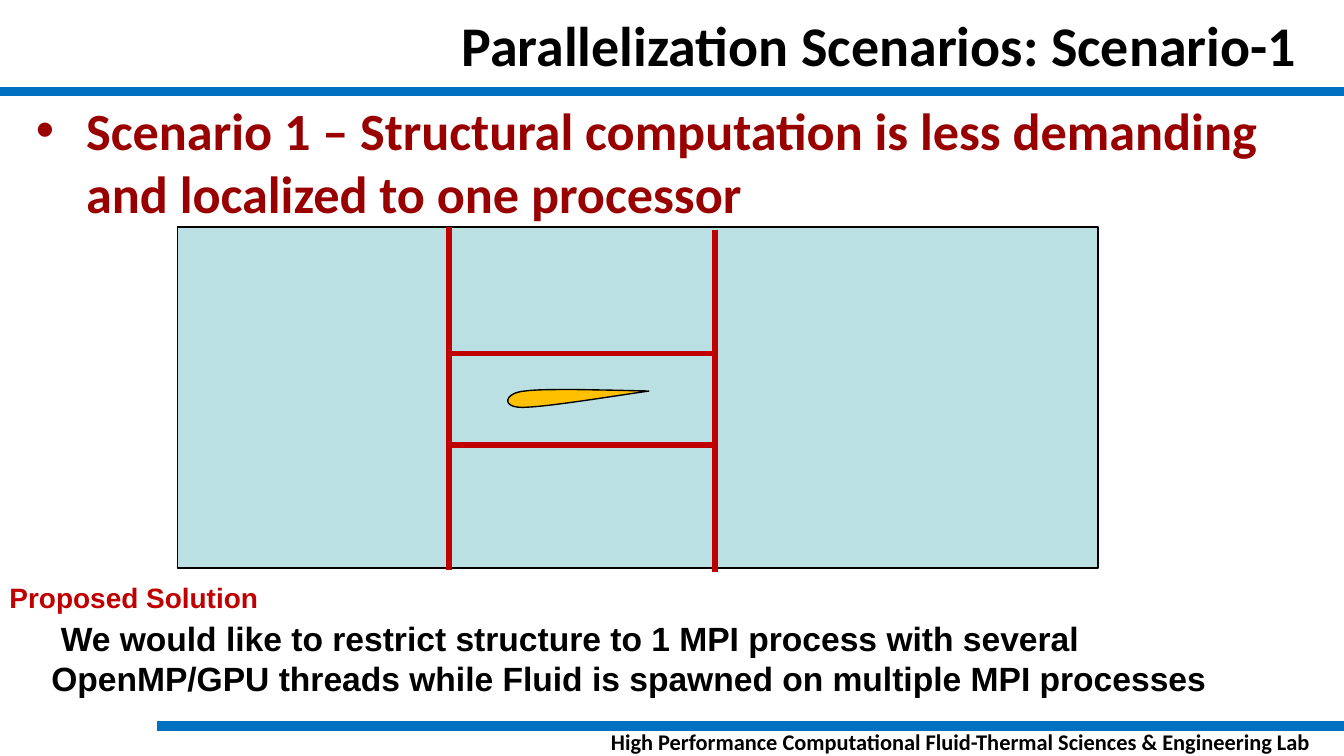
from lxml import etree
from pptx import Presentation
from pptx import util as u
from pptx.dml.color import RGBColor
from pptx.enum import shapes, text
from pptx.oxml import ns

COLORS = {"black": "000000", "blue": "0070C0", "red": "C00000",
          "maroon": "990000", "water": "BBE0E3", "gold": "FFC000"}

TITLE = {"words": "Parallelization Scenarios: Scenario-1",
         "box": (0.43, 0.08, 24.33, 1.52), "align": text.PP_ALIGN.RIGHT,
         "anchor": text.MSO_ANCHOR.MIDDLE,
         "font": {"name": "Calibri", "size": 30, "color": "black"}}

TEXTS = [
    {"words": "Scenario 1 – Structural computation is less demanding and localized to one processor",
     "box": (0.43, 1.73, 24.33, 2.9), "indent": (0.95, -0.95), "bullet": "•",
     "font": {"name": "Calibri", "size": 28, "color": "maroon"}},
    {"words": "We would like to restrict structure to 1 MPI process with several "
              "OpenMP/GPU threads while Fluid is spawned on multiple MPI processes",
     "box": (0.79, 11.58, 24.03, 2.49), "margins": (0.18, 0.1), "indent": (0, 0.18),
     "font": {"name": "Arial", "size": 18, "color": "black"}},
    {"words": "Proposed Solution",
     "box": (0, 10.87, 5.13, 0.84), "margins": (0.18, 0.1), "wrap": False,
     "font": {"name": "Arial", "size": 15, "color": "red"}},
    {"words": "High Performance Computational Fluid-Thermal Sciences & Engineering Lab",
     "box": (11.13, 13.77, 13.64, 0.51), "margins": (0, 0),
     "align": text.PP_ALIGN.RIGHT,
     "font": {"name": "Calibri", "size": 12, "color": "black"}},
]

DOMAIN = (3.35, 4.29, 17.4, 6.45)
LEFT_CUT, RIGHT_CUT = 8.48, 13.51
RULES = [(2.97, 13.72, 25.4, 13.72), (0, 1.73, 25.4, 1.73)]
CUTS = [(LEFT_CUT, 4.29, LEFT_CUT, 10.77), (RIGHT_CUT, 4.34, RIGHT_CUT, 10.82),
        (LEFT_CUT, 6.68, RIGHT_CUT, 6.68), (LEFT_CUT, 8.41, RIGHT_CUT, 8.41)]
FOIL_START = (12.27, 7.39)
FOIL_CURVES = [((11.25, 7.54), (10.26, 7.7), (9.86, 7.7)),
               ((9.47, 7.7), (9.53, 7.42), (9.93, 7.39)),
               ((10.31, 7.34), (11.28, 7.37), (12.22, 7.39))]
STEPS = 16


def rgb(name):
    return RGBColor.from_string(COLORS[name])


def lengths(values):
    return [u.Cm(v) for v in values]


def write(sp, item):
    tf = sp.text_frame
    settings = {"word_wrap": item.get("wrap", True), "auto_size": text.MSO_AUTO_SIZE.NONE,
                "vertical_anchor": item.get("anchor", text.MSO_ANCHOR.TOP)}
    side, top = lengths(item.get("margins", (0.25, 0.13)))
    settings.update(margin_left=side, margin_right=side, margin_top=top, margin_bottom=top)
    for key, value in settings.items():
        setattr(tf, key, value)
    p = tf.paragraphs[0]
    p.alignment = item.get("align", text.PP_ALIGN.LEFT)
    if "indent" in item:
        pPr = p._p.get_or_add_pPr()
        for key, value in zip(("marL", "indent"), lengths(item["indent"])):
            pPr.set(key, str(value))
        if "bullet" in item:
            etree.SubElement(pPr, ns.qn("a:buFont")).set("typeface", "Arial")
            etree.SubElement(pPr, ns.qn("a:buChar")).set("char", item["bullet"])
    r = p.add_run()
    r.text = item["words"]
    font = item["font"]
    for key, value in {"name": font["name"], "size": u.Pt(font["size"]), "bold": True}.items():
        setattr(r.font, key, value)
    r.font.color.rgb = rgb(font["color"])


def add_line(s, ends, color, width):
    line = s.shapes.add_connector(shapes.MSO_CONNECTOR.STRAIGHT, *lengths(ends))
    line.line.color.rgb = rgb(color)
    line.line.width = u.Pt(width)
    etree.SubElement(line._element.spPr, ns.qn("a:effectLst"))


def paint(sp, fill):
    sp.shadow.inherit = False
    sp.fill.solid()
    sp.fill.fore_color.rgb = rgb(fill)
    sp.line.color.rgb = rgb("black")
    sp.line.width = u.Pt(0.75)


def curve_points(start, curves):
    for a, b, end in curves:
        for i in range(1, STEPS + 1):
            t = i / STEPS
            weights = ((1 - t) ** 3, 3 * t * (1 - t) ** 2, 3 * t ** 2 * (1 - t), t ** 3)
            yield [sum(w * q[axis] for w, q in zip(weights, (start, a, b, end)))
                   for axis in (0, 1)]
        start = end


prs = Presentation()
prs.slide_width, prs.slide_height = lengths((25.4, 14.29))
s = prs.slides.add_slide(prs.slide_layouts[5])

for ends in RULES:
    add_line(s, ends, "blue", 5)

paint(s.shapes.add_shape(shapes.MSO_SHAPE.RECTANGLE, *lengths(DOMAIN)), "water")

title = s.shapes.title
for key, value in zip(("left", "top", "width", "height"), lengths(TITLE["box"])):
    setattr(title, key, value)
write(title, TITLE)

for ends in CUTS:
    add_line(s, ends, "red", 3)

foil = s.shapes.build_freeform(*lengths(FOIL_START))
foil.add_line_segments([lengths(q) for q in curve_points(FOIL_START, FOIL_CURVES)], close=False)
paint(foil.convert_to_shape(), "gold")

for item in TEXTS:
    write(s.shapes.add_textbox(*lengths(item["box"])), item)

prs.save("out.pptx")
